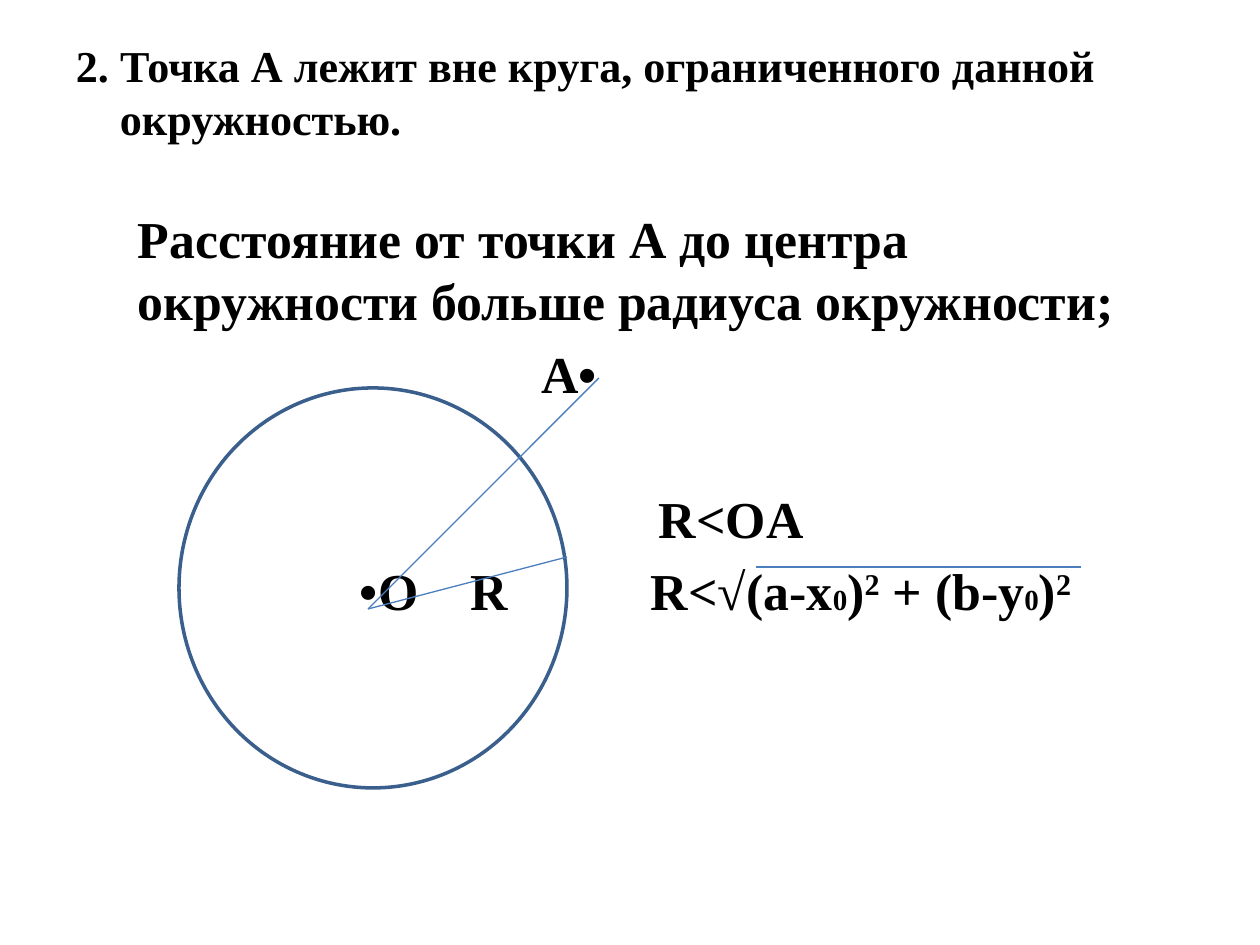
import pptx
import pptx.dml.color
import pptx.enum.shapes
import pptx.enum.text
import pptx.oxml.ns
import pptx.util
import lxml.etree

PX = pptx.util.Inches(1) // 126


def color(value):
    return pptx.dml.color.RGBColor.from_string(value)


class Board:
    font_name = "Times New Roman"
    ink = "000000"
    circle_line = "3A5F8C"
    thin_line = "4B7EBC"

    def __init__(self, slide):
        self.slide = slide

    def text(self, left, top, width, height, spans, size=29.6, pitch=35.4, hanging=0):
        box = self.slide.shapes.add_textbox(left * PX, top * PX, width * PX, height * PX)
        frame = box.text_frame
        frame.word_wrap = True
        frame.vertical_anchor = pptx.enum.text.MSO_ANCHOR.TOP
        frame.margin_left = frame.margin_right = frame.margin_top = frame.margin_bottom = 0
        para = frame.paragraphs[0]
        para.line_spacing = pptx.util.Pt(pitch)
        para.font.name = self.font_name
        para.font.size = pptx.util.Pt(size)
        para.font.bold = True
        para.font.color.rgb = color(self.ink)
        if hanging:
            properties = para._p.get_or_add_pPr()
            properties.set("marL", str(hanging * PX))
            properties.set("indent", str(-hanging * PX))
        for words, role in spans:
            span = para.add_run()
            span.text = words
            if role == "index":
                span.font.size = pptx.util.Pt(16.6)
            elif role == "power":
                span.font._element.set("baseline", "30000")

    def circle(self, left, top, width, height):
        shape = self.slide.shapes.add_shape(
            pptx.enum.shapes.MSO_SHAPE.OVAL, left * PX, top * PX, width * PX, height * PX)
        shape.shadow.inherit = False
        shape.fill.background()
        shape.line.color.rgb = color(self.circle_line)
        shape.line.width = pptx.util.Pt(2)

    def line(self, start, end):
        connector = self.slide.shapes.add_connector(
            pptx.enum.shapes.MSO_CONNECTOR.STRAIGHT,
            start[0] * PX, start[1] * PX, end[0] * PX, end[1] * PX)
        connector.line.color.rgb = color(self.thin_line)
        connector.line.width = pptx.util.Pt(0.75)
        lxml.etree.SubElement(connector._element.spPr, pptx.oxml.ns.qn("a:effectLst"))


def main():
    deck = pptx.Presentation()
    deck.slide_width = 1260 * PX
    deck.slide_height = 945 * PX
    board = Board(deck.slides.add_slide(deck.slide_layouts[6]))

    board.text(76, 38, 1110, 110,
               [("2. Точка А лежит вне круга, ограниченного данной окружностью.", "")],
               size=25.2, pitch=30.3, hanging=44)
    board.text(138, 207, 1000, 126,
               [("Расстояние от точки А до центра окружности больше радиуса окружности;", "")])

    formula = [("R<√(a-x", ""), ("0", "index"), (")", ""), ("2", "power"),
               (" + (b-y", ""), ("0", "index"), (")", ""), ("2", "power")]
    labels = [
        (541, 342, 80, [("А•", "")]),
        (659, 487, 170, [("R<OA", "")]),
        (360, 559, 80, [("•О", "")]),
        (471, 559, 60, [("R", "")]),
        (651, 559, 460, formula),
    ]
    for left, top, width, spans in labels:
        board.text(left, top, width, 64, spans)

    board.circle(179, 388, 388, 400)
    center = (368, 609)
    board.line(center, (599, 378))
    board.line(center, (567, 557))
    board.line((756, 567), (1081, 567))

    deck.save("out.pptx")


if __name__ == "__main__":
    main()
